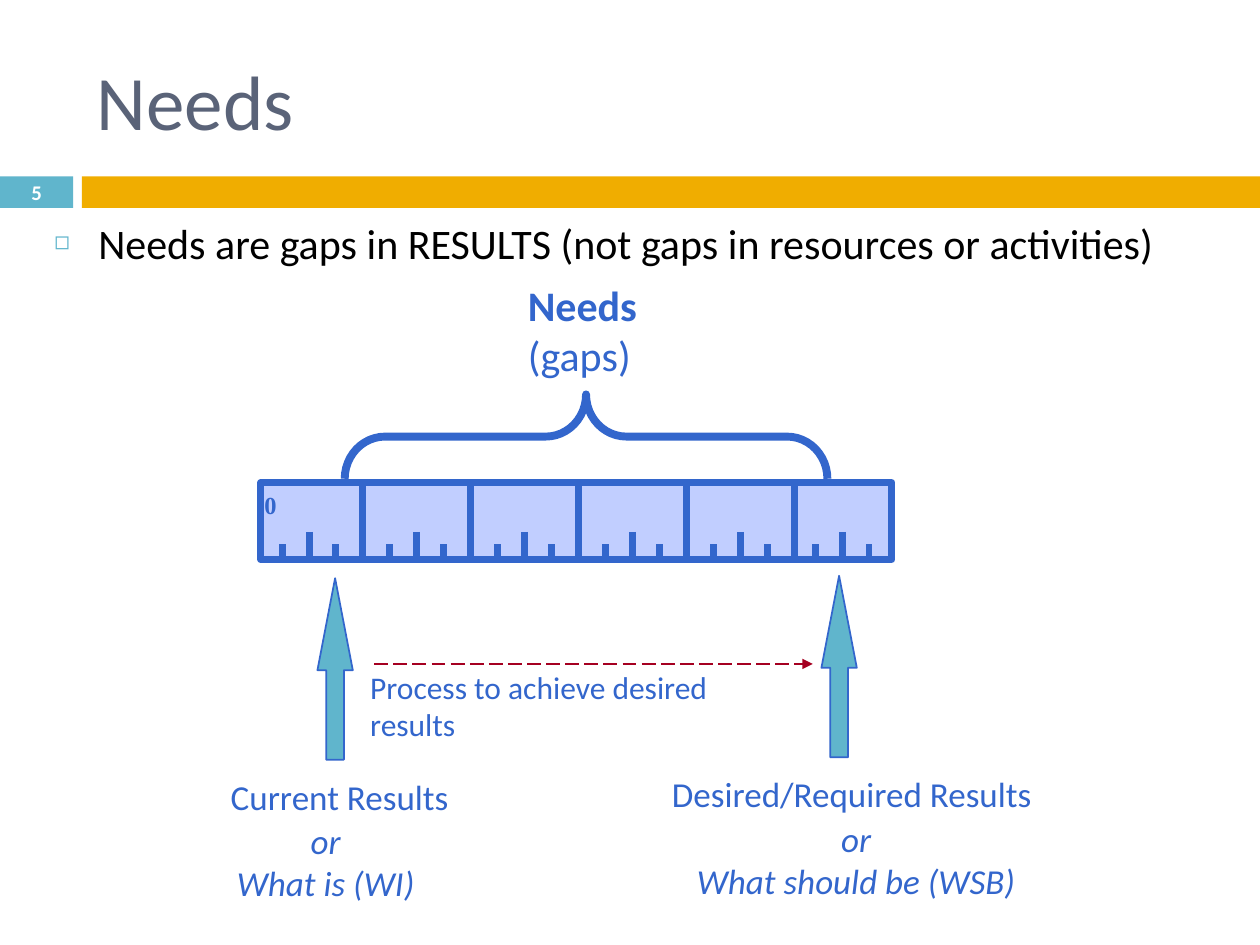
from lxml import etree
from pptx import Presentation
from pptx import util as u
from pptx.dml.color import RGBColor
from pptx.enum import dml, shapes, text
from pptx.oxml import ns

Pt = u.Pt
INK, TEAL, GOLD = "3366CC", "60B5CC", "F0AD00"


def color(value):
    return RGBColor.from_string(value)


def points(*lengths):
    return [Pt(length) for length in lengths]


def add_tag(parent, tag, **attributes):
    return etree.SubElement(parent, ns.qn(tag), attributes)


def style_font(font, size, value, name="Calibri", bold=False, italic=False):
    font.size, font.name = Pt(size), name
    font.bold, font.italic = bold, italic
    font.color.rgb = color(value)


def add_shape(parent, kind, box, fill=None, line=None, width=1):
    shape = parent.shapes.add_shape(kind, *points(*box))
    shape.shadow.inherit = False
    if fill:
        shape.fill.solid()
        shape.fill.fore_color.rgb = color(fill)
    else:
        shape.fill.background()
    if line:
        shape.line.color.rgb = color(line)
        shape.line.width = Pt(width)
    else:
        shape.line.fill.background()
    return shape


def add_line(parent, start, end, value, width):
    line = parent.shapes.add_connector(
        shapes.MSO_CONNECTOR.STRAIGHT, *points(*start, *end))
    line.line.color.rgb = color(value)
    line.line.width = Pt(width)
    add_tag(line._element.spPr, "a:effectLst")
    return line


def add_label(parent, box, lines, size, align=text.PP_ALIGN.LEFT, wrap=False, **style):
    label = parent.shapes.add_textbox(*points(*box))
    frame = label.text_frame
    frame.word_wrap = wrap
    frame.text = lines
    for para in frame.paragraphs:
        para.alignment = align
        style_font(para.font, size, style.get("value", INK),
                   style.get("name", "Calibri"),
                   style.get("bold", False), style.get("italic", False))
    return label


def place(holder, box, words):
    holder.left, holder.top, holder.width, holder.height = points(*box)
    frame = holder.text_frame
    frame.auto_size = text.MSO_AUTO_SIZE.NONE
    frame.text = words
    return frame


def fill_title(page, box):
    frame = place(page.shapes.title, box, "Needs")
    frame.vertical_anchor = text.MSO_ANCHOR.MIDDLE
    para = frame.paragraphs[0]
    para.alignment = text.PP_ALIGN.LEFT
    style_font(para.font, 44, "5A6378")


def fill_body(page, box):
    frame = place(page.placeholders[1], box,
                  "Needs are gaps in RESULTS (not gaps in resources or activities)")
    para = frame.paragraphs[0]
    para.line_spacing, para.space_before = 0.8, Pt(7)
    style_font(para.font, 24, "000000")
    properties = para._p.get_or_add_pPr()
    properties.set("marL", str(Pt(25.2)))
    properties.set("indent", str(-Pt(25.2)))
    bullet_color = etree.Element(ns.qn("a:buClr"))
    add_tag(bullet_color, "a:srgbClr", val=TEAL)
    bullet_size = etree.Element(ns.qn("a:buSzPct"), val="60000")
    bullet = etree.Element(ns.qn("a:buChar"), char="◻")
    spacing = properties.find(ns.qn("a:spcBef"))
    for tag in (bullet, bullet_size, bullet_color):
        spacing.addnext(tag)


def draw_band(page, box, number):
    left, top, width, height = box
    number_width, bar_left = 41.8, 46.8
    rect = shapes.MSO_SHAPE.RECTANGLE
    add_shape(page, rect, (left, top, number_width, height), TEAL)
    add_shape(page, rect, (left + bar_left, top, width - bar_left, height), GOLD)
    label = add_label(page, (left, top - 0.7, number_width, 19.4), number, 11.9,
                      text.PP_ALIGN.CENTER, True, value="FFFFFF", bold=True)
    label.text_frame.vertical_anchor = text.MSO_ANCHOR.MIDDLE


def draw_ruler(page, box):
    left, top, width, height = box
    right, base = left + width, top + height - 0.7
    group = page.shapes.add_group_shape()
    add_shape(group, shapes.MSO_SHAPE.RECTANGLE, box, "C1CEFF", INK, 4)
    add_label(group, (left - 5, top + 0.7, 20.9, 23.8), "0", 14,
              name="Times New Roman", bold=True)
    tick_gap = 15.4
    unit_starts = [left - 3.2 + 4 * tick_gap * unit for unit in range(5)]
    unit_starts.append(right - 59.3)  # the last unit is cut short
    for start in unit_starts:
        for step, length in enumerate((7.9, 15.1, 7.9, 42.5), 1):
            x = min(start + step * tick_gap, right)
            add_line(group, (x, base - length), (x, base), INK, 4)


def draw_gap(page, box):
    """Heading of the gap, with the brace that spans it below."""
    left, top, width, height = box
    heading = add_label(page, (left + 97.5, top, 78.5, 65.5), "", 24)
    para = heading.text_frame.paragraphs[0]
    span = para.add_run()
    span.text = "Needs"
    span.font.bold = True
    para.add_line_break()
    para.add_run().text = "(gaps)"
    depth = 48.2
    brace = add_shape(page, shapes.MSO_SHAPE.LEFT_BRACE,
                      (left + (width - depth) / 2, top + height - (depth + width) / 2,
                       depth, width), line=INK, width=4.5)
    brace.rotation = 90
    brace.adjustments[0], brace.adjustments[1] = 0.479, 0.5


def draw_result(page, box, arrow_x, detail_x, heading, detail):
    """Upward arrow over a heading and its detail; x values are centres."""
    left, top, width, _ = box
    length, thickness, detail_width = 103.7, 20.2, 198
    arrow = add_shape(page, shapes.MSO_SHAPE.RIGHT_ARROW,
                      (left + arrow_x - length / 2, top + (length - thickness) / 2,
                       length, thickness), TEAL, INK)
    arrow.rotation = 270
    arrow.adjustments[0], arrow.adjustments[1] = 0.5, 2.6
    center = text.PP_ALIGN.CENTER
    add_label(page, (left, top + 109, width, 31), heading, 20, center)
    add_label(page, (left + detail_x - detail_width / 2, top + 134.6,
                     detail_width, 55.4), detail, 20, center, italic=True)


def draw_process(page, box):
    left, top, width, height = box
    arrow = add_line(page, (left + 9.4, top + 1.4), (left + 260, top + 1.4), "A50021", 1)
    arrow.line.dash_style = dml.MSO_LINE.LONG_DASH
    add_tag(arrow.line._get_or_add_ln(), "a:tailEnd", type="triangle")
    add_label(page, box, "Process to achieve desired results", 18, wrap=True)


def main():
    deck = Presentation()
    deck.slide_width, deck.slide_height = points(720, 540)
    page = deck.slides.add_slide(deck.slide_layouts[1])
    draw_band(page, (0, 100.8, 720, 18), "5")
    fill_title(page, (48.2, 18, 642.2, 77.8))
    fill_body(page, (23.8, 126, 684, 41.8))
    draw_ruler(page, (149, 275.8, 360.7, 43.9))
    draw_gap(page, (197, 156.2, 275.8, 117.4))
    draw_result(page, (117.4, 330.4, 153.4, 190), 74.1, 68.7,
                "Current Results", "or\nWhat is (WI)")
    draw_result(page, (357.8, 329, 257.8, 190), 121.7, 131.4,
                "Desired/Required Results", "or\nWhat should be (WSB)")
    draw_process(page, (204.5, 378, 254.2, 28.8))
    deck.save("out.pptx")


if __name__ == "__main__":
    main()
